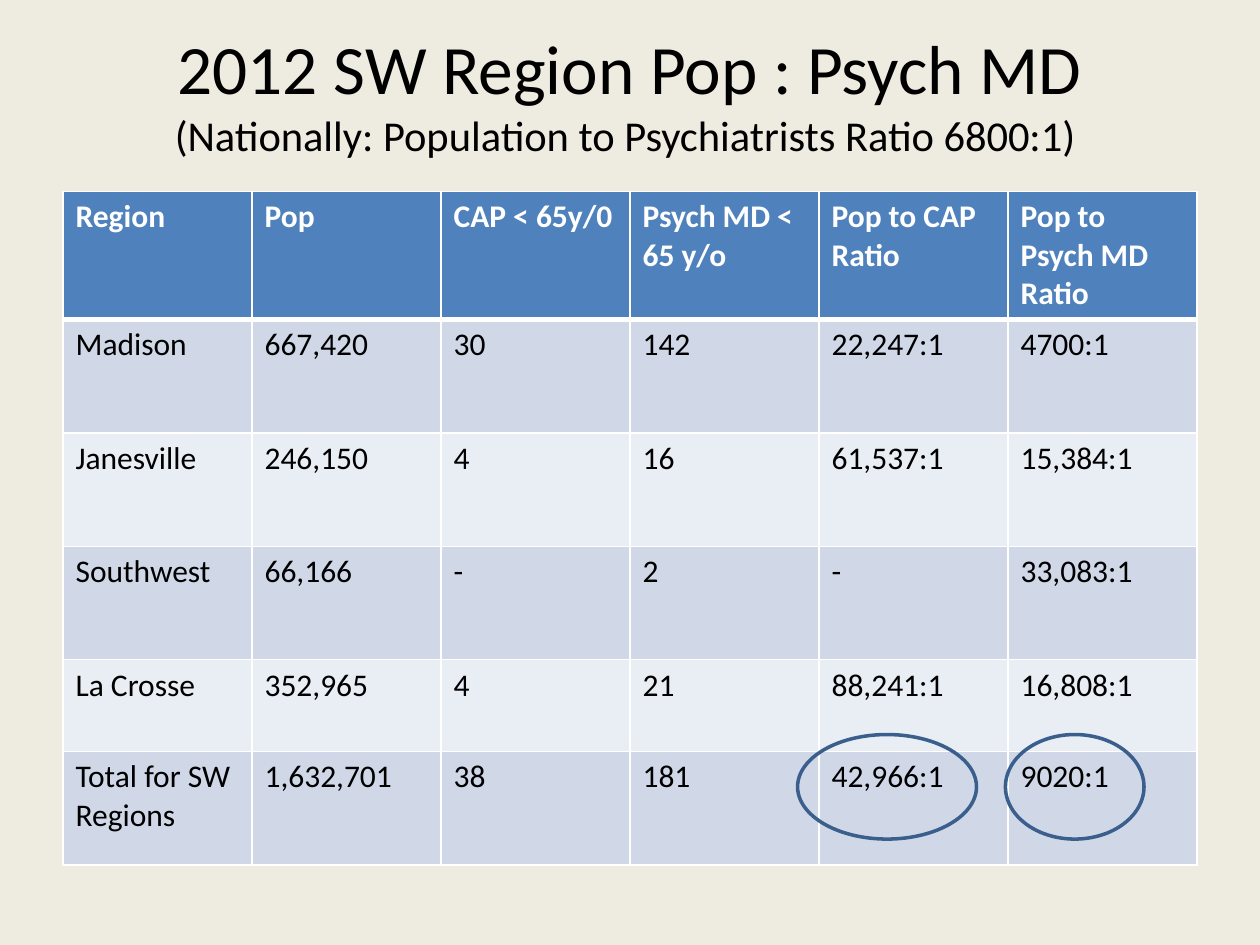
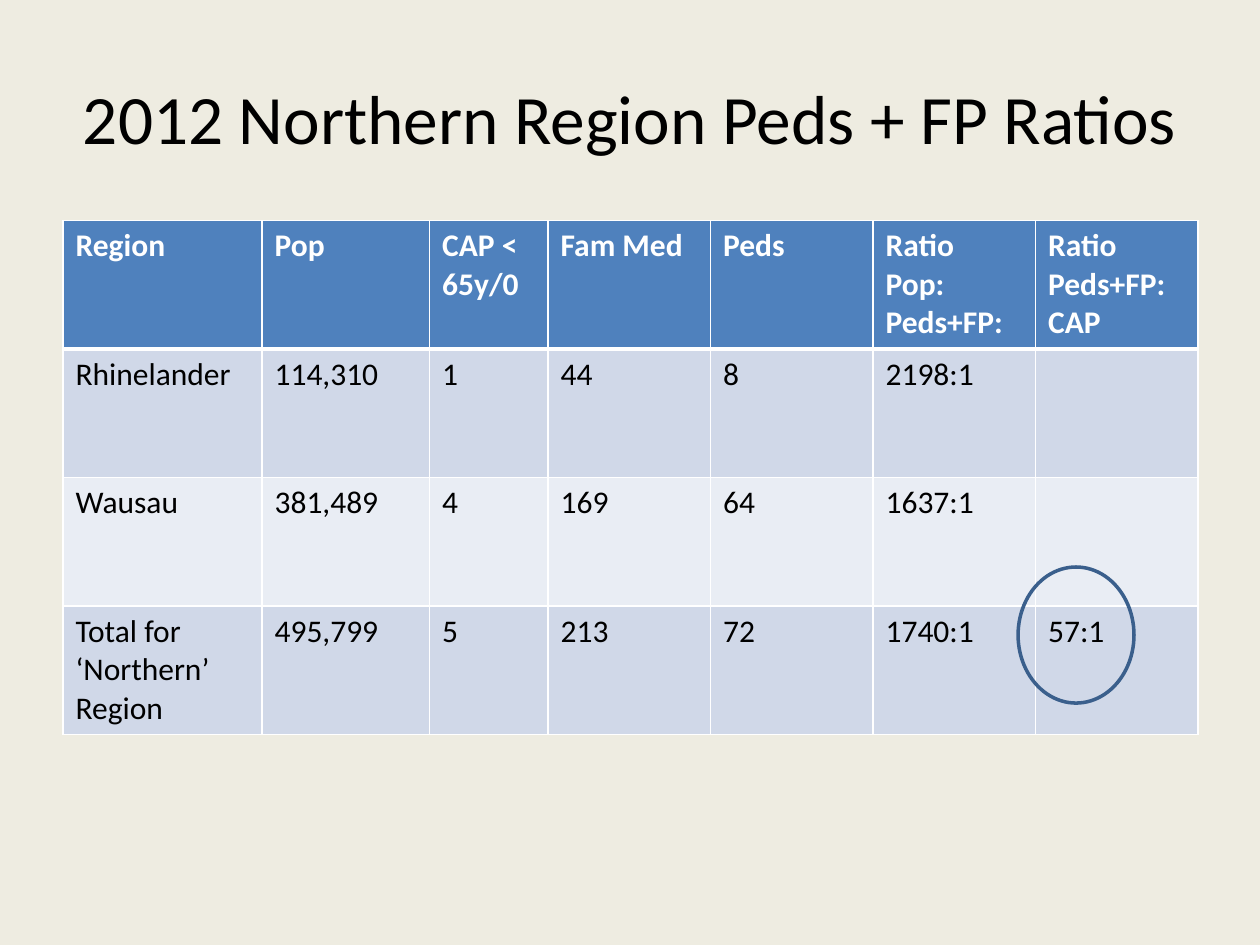
import pptx
import pptx.util
import pptx.dml.color
import pptx.enum.shapes
import pptx.enum.text
import pptx.oxml
import pptx.oxml.ns
from pptx.util import Inches

COLORS = {
    "background": "EEECE1",
    "header": "4F81BD",
    "odd_row": "D0D8E8",
    "even_row": "E9EDF4",
    "border": "FFFFFF",
    "header_text": "FFFFFF",
    "text": "000000",
    "highlight": "3A5F8C",
}
FONT = "Calibri"
TITLE_SIZE, SUBTITLE_SIZE, TABLE_SIZE = 39.6, 24.3, 18
MARGIN, TITLE_TOP, CONTENT_WIDTH = 0.5, 0.3, 9
GRID_LINE, HEADER_LINE, HIGHLIGHT_LINE = 1, 3, 2

REGIONS = [
    {
        "title": [
            ("2012 SW Region Pop : Psych MD", TITLE_SIZE),
            ("(Nationally: Population to Psychiatrists Ratio 6800:1) ", SUBTITLE_SIZE),
        ],
        "title_height": 0.87,
        "table_top": 1.52,
        "columns": [1.5] * 6,
        "row_heights": [0.94, 0.9, 0.9, 0.9, 0.73, 0.9],
        "rows": [
            ["Region", "Pop", "CAP < 65y/0", "Psych MD < 65 y/o",
             "Pop to CAP Ratio", "Pop to Psych MD Ratio"],
            ["Madison", "667,420", "30", "142", "22,247:1", "4700:1"],
            ["Janesville", "246,150", "4", "16", "61,537:1", "15,384:1"],
            ["Southwest", "66,166", "-", "2", "-", "33,083:1"],
            ["La Crosse", "352,965", "4", "21", "88,241:1", "16,808:1"],
            ["Total for SW Regions", "1,632,701", "38", "181", "42,966:1", "9020:1"],
        ],
        "highlights": [(6.33, 5.83, 1.42, 0.83), (7.98, 5.83, 1.1, 0.83)],
    },
    {
        "title": [("2012 Northern Region Peds + FP Ratios", TITLE_SIZE)],
        "title_height": 1.25,
        "table_top": 1.75,
        "columns": [1.58, 1.33, 0.94] + [1.29] * 4,
        "row_heights": [1.02] * 4,
        "rows": [
            ["Region", "Pop", "CAP < 65y/0", "Fam Med", "Peds",
             "Ratio\nPop:\nPeds+FP:", "Ratio\nPeds+FP: CAP"],
            ["Rhinelander", "114,310", "1", "44", "8", "2198:1", ""],
            ["Wausau", "381,489", "4", "169", "64", "1637:1", ""],
            ["Total for ‘Northern’\nRegion", "495,799", "5", "213", "72", "1740:1", "57:1"],
        ],
        "highlights": [(8.08, 4.5, 0.92, 1.08)],
    },
]


def color(name):
    return pptx.dml.color.RGBColor.from_string(COLORS[name])


def add_run(paragraph, text, size, color_name, bold=False):
    run = paragraph.add_run()
    run.text = text
    run.font.name = FONT
    run.font.size = pptx.util.Pt(size)
    run.font.bold = bold
    run.font.color.rgb = color(color_name)


def add_title(slide, lines, height):
    title = slide.shapes.title
    title.left, title.top = Inches(MARGIN), Inches(TITLE_TOP)
    title.width, title.height = Inches(CONTENT_WIDTH), Inches(height)
    frame = title.text_frame
    frame.word_wrap = True
    frame.auto_size = pptx.enum.text.MSO_AUTO_SIZE.NONE
    frame.vertical_anchor = pptx.enum.text.MSO_ANCHOR.MIDDLE
    paragraph = frame.paragraphs[0]
    paragraph.alignment = pptx.enum.text.PP_ALIGN.CENTER
    for index, (text, size) in enumerate(lines):
        if index:
            paragraph.add_line_break()
        add_run(paragraph, text, size, "text")


def set_borders(cell, row_index):
    widths = {
        "L": GRID_LINE,
        "R": GRID_LINE,
        "T": HEADER_LINE if row_index == 1 else GRID_LINE,
        "B": HEADER_LINE if row_index == 0 else GRID_LINE,
    }
    properties = cell._tc.get_or_add_tcPr()
    for position, (side, width) in enumerate(widths.items()):
        properties.insert(position, pptx.oxml.parse_xml(
            f'<a:ln{side} {pptx.oxml.ns.nsdecls("a")} w="{pptx.util.Pt(width)}">'
            f'<a:solidFill><a:srgbClr val="{COLORS["border"]}"/></a:solidFill>'
            f'</a:ln{side}>'))


def fill_cell(cell, text, row_index):
    is_header = row_index == 0
    band = "header" if is_header else ("even_row", "odd_row")[row_index % 2]
    cell.fill.solid()
    cell.fill.fore_color.rgb = color(band)
    set_borders(cell, row_index)
    frame = cell.text_frame
    for index, line in enumerate(text.split("\n") if text else []):
        paragraph = frame.add_paragraph() if index else frame.paragraphs[0]
        add_run(paragraph, line, TABLE_SIZE,
                "header_text" if is_header else "text", is_header)


def add_ratios(slide, region):
    rows, columns, heights = region["rows"], region["columns"], region["row_heights"]
    ratios = slide.shapes.add_table(
        len(rows), len(columns), Inches(MARGIN), Inches(region["table_top"]),
        Inches(CONTENT_WIDTH), Inches(sum(heights))).table
    ratios.horz_banding = False
    ratios.first_row = False
    for column, width in zip(ratios.columns, columns):
        column.width = Inches(width)
    for row_index, (row, height, texts) in enumerate(zip(ratios.rows, heights, rows)):
        row.height = Inches(height)
        for cell, text in zip(row.cells, texts):
            fill_cell(cell, text, row_index)


def add_highlight(slide, bounds):
    highlight = slide.shapes.add_shape(
        pptx.enum.shapes.MSO_SHAPE.OVAL, *map(Inches, bounds))
    highlight.shadow.inherit = False
    highlight.fill.background()
    highlight.line.color.rgb = color("highlight")
    highlight.line.width = pptx.util.Pt(HIGHLIGHT_LINE)


def main():
    deck = pptx.Presentation()
    deck.slide_width, deck.slide_height = Inches(10), Inches(7.5)
    backdrop = deck.slide_master.background.fill
    backdrop.solid()
    backdrop.fore_color.rgb = color("background")
    title_only = deck.slide_layouts.get_by_name("Title Only")
    for region in REGIONS:
        slide = deck.slides.add_slide(title_only)
        add_title(slide, region["title"], region["title_height"])
        add_ratios(slide, region)
        for bounds in region["highlights"]:
            add_highlight(slide, bounds)
    deck.save("out.pptx")


if __name__ == "__main__":
    main()
